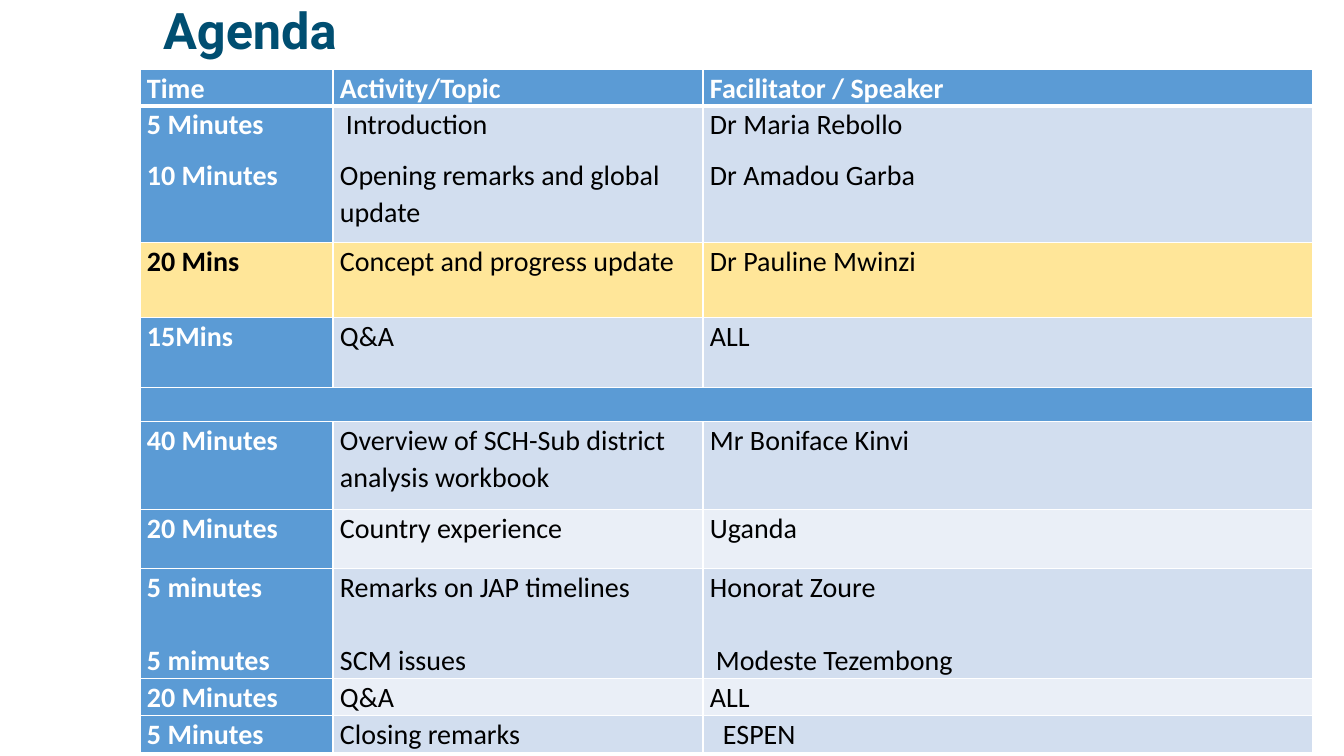
from lxml import etree
from pptx import Presentation
from pptx.dml.color import RGBColor
from pptx.enum.text import MSO_ANCHOR as Anchor, MSO_AUTO_SIZE as AutoSize, PP_ALIGN as Align
from pptx.oxml.ns import qn
from pptx.util import Emu, Pt

WHITE = RGBColor(0xFF, 0xFF, 0xFF)
BLACK = RGBColor(0x00, 0x00, 0x00)
TEAL = RGBColor(0x00, 0x4E, 0x71)
BLUE = RGBColor(0x5B, 0x9B, 0xD5)
PALE = RGBColor(0xD2, 0xDE, 0xEF)
PALEST = RGBColor(0xEA, 0xEF, 0xF7)
YELLOW = RGBColor(0xFF, 0xE6, 0x99)

COLUMNS = [193, 370, 610]
HEADER = ["Time", "Activity/Topic", "Facilitator / Speaker"]
BREAK_ROW = None
SESSIONS = [
    (137, PALE, 10, [["5 Minutes", "10 Minutes"],
                     ["Introduction", "Opening remarks and global update"],
                     ["Dr Maria Rebollo", "Dr Amadou Garba"]]),
    (75, YELLOW, 10, [["20 Mins"], ["Concept and progress update"], ["Dr Pauline Mwinzi"]]),
    (70, PALE, 10, [["15Mins"], ["Q&A"], ["ALL"]]),
    (34, BLUE, 0, BREAK_ROW),
    (88, PALE, 10, [["40 Minutes"], ["Overview of SCH-Sub district analysis workbook"],
                    ["Mr Boniface Kinvi"]]),
    (59, PALEST, 10, [["20 Minutes"], ["Country experience"], ["Uganda"]]),
    (109, PALE, 26, [["5 minutes", "5 mimutes"],
                     ["Remarks on JAP timelines", "SCM issues"],
                     ["Honorat Zoure", "Modeste Tezembong"]]),
    (37, PALEST, 10, [["20 Minutes"], ["Q&A"], ["ALL"]]),
    (37, PALE, 10, [["5 Minutes"], ["Closing remarks"], ["ESPEN"]]),
]
INDENTS = {"Introduction": 6, "Modeste Tezembong": 6, "ESPEN": 13}


class AgendaSlide:
    EMU_PER_PX = 914400 / 100.8

    def __init__(self, width, height):
        self.deck = Presentation()
        self.deck.slide_width = self.px(width)
        self.deck.slide_height = self.px(height)
        self.slide = self.deck.slides.add_slide(self.deck.slide_layouts[5])

    def px(self, length):
        return Emu(round(length * self.EMU_PER_PX))

    def style(self, paragraph, face, size, color, bold):
        font = paragraph.font
        font.name, font.size, font.bold = face, Pt(size), bold
        font.color.rgb = color

    def title(self, text, left, top, width, height):
        heading = self.slide.shapes.title
        heading.left, heading.top = self.px(left), self.px(top)
        heading.width, heading.height = self.px(width), self.px(height)
        frame = heading.text_frame
        frame.text = text
        frame.word_wrap = True
        frame.auto_size = AutoSize.NONE
        frame.vertical_anchor = Anchor.MIDDLE
        line = frame.paragraphs[0]
        line.alignment = Align.LEFT
        line.line_spacing = 0.9
        self.style(line, "Roboto", 36, TEAL, True)

    def table(self, left, top, columns, heights):
        frame = self.slide.shapes.add_table(
            len(heights), len(columns), self.px(left), self.px(top),
            self.px(sum(columns)), self.px(sum(heights)))
        agenda = frame.table
        agenda.first_row = agenda.horz_banding = False
        for column, width in zip(agenda.columns, columns):
            column.width = self.px(width)
        for row, height in zip(agenda.rows, heights):
            row.height = self.px(height)
        return agenda

    def cell(self, cell, fill, top=1, bottom=1):
        cell.margin_left = cell.margin_right = self.px(7)
        cell.margin_top = cell.margin_bottom = 0
        properties = cell._tc.get_or_add_tcPr()
        for side, points in (("L", 1), ("R", 1), ("T", top), ("B", bottom)):
            border = etree.SubElement(properties, qn(f"a:ln{side}"), w=str(Pt(points)))
            paint = etree.SubElement(border, qn("a:solidFill"))
            etree.SubElement(paint, qn("a:srgbClr"), val=str(WHITE))
        cell.fill.solid()
        cell.fill.fore_color.rgb = fill

    def entry(self, cell, lines, color, bold, gap):
        frame = cell.text_frame
        frame.text = "\n".join(lines)
        for paragraph, text in zip(frame.paragraphs, lines):
            if text in INDENTS:
                paragraph._p.get_or_add_pPr().set("marL", str(self.px(INDENTS[text])))
            paragraph.line_spacing = 1.07
            paragraph.space_after = Pt(gap)
            self.style(paragraph, "Calibri", 20, color, bold)


def main():
    page = AgendaSlide(1344, 756)
    page.title("Agenda", 153, 0, 1159, 66)
    agenda = page.table(140, 69, COLUMNS, [36] + [session[0] for session in SESSIONS])

    for column, heading in enumerate(HEADER):
        page.cell(agenda.cell(0, column), BLUE, bottom=3)
        page.entry(agenda.cell(0, column), [heading], WHITE, True, 10)

    for row, (_, fill, gap, entries) in enumerate(SESSIONS, start=1):
        for column in range(len(COLUMNS)):
            is_time = column == 0
            highlighted = fill == YELLOW
            cell = agenda.cell(row, column)
            page.cell(cell, BLUE if is_time and not highlighted else fill,
                      top=3 if row == 1 else 1)
            if entries is not BREAK_ROW:
                color = WHITE if is_time and not highlighted else BLACK
                page.entry(cell, entries[column], color, is_time, gap)
        if entries is BREAK_ROW:
            agenda.cell(row, 0).merge(agenda.cell(row, len(COLUMNS) - 1))

    page.deck.save("out.pptx")


if __name__ == "__main__":
    main()
